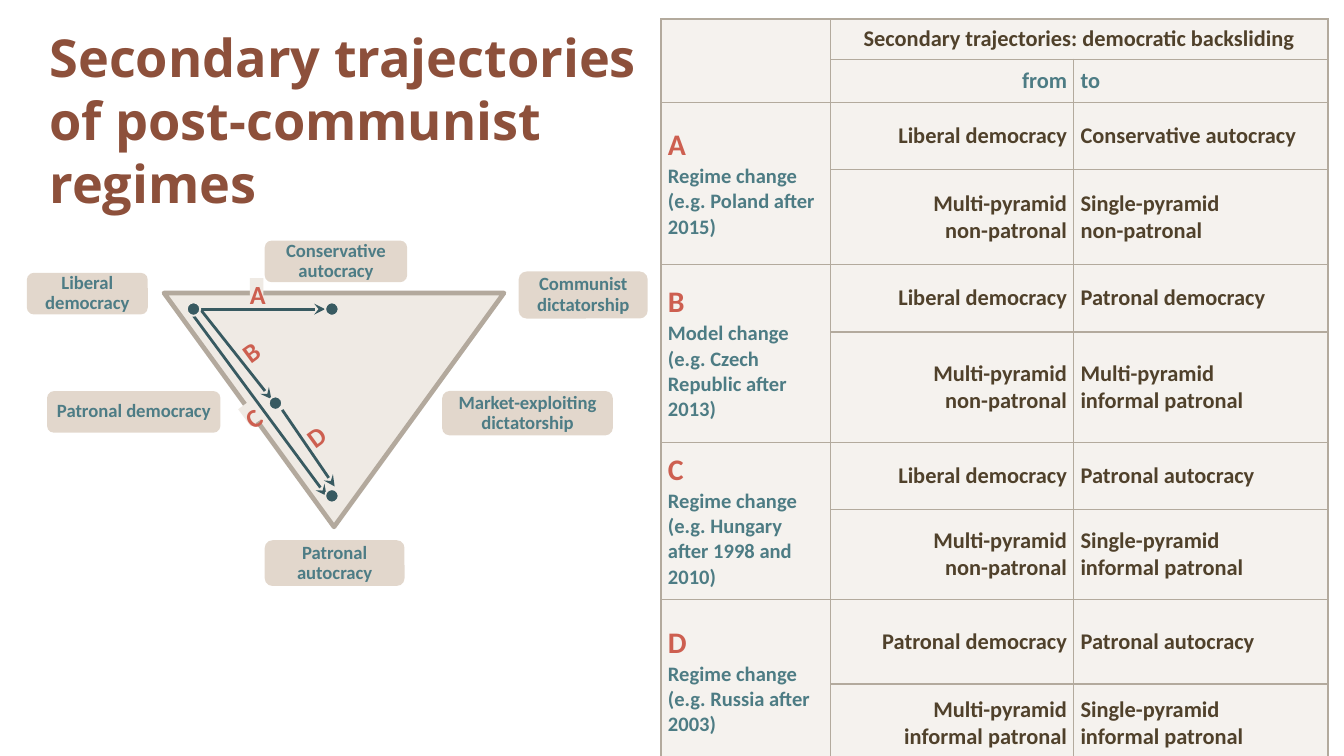
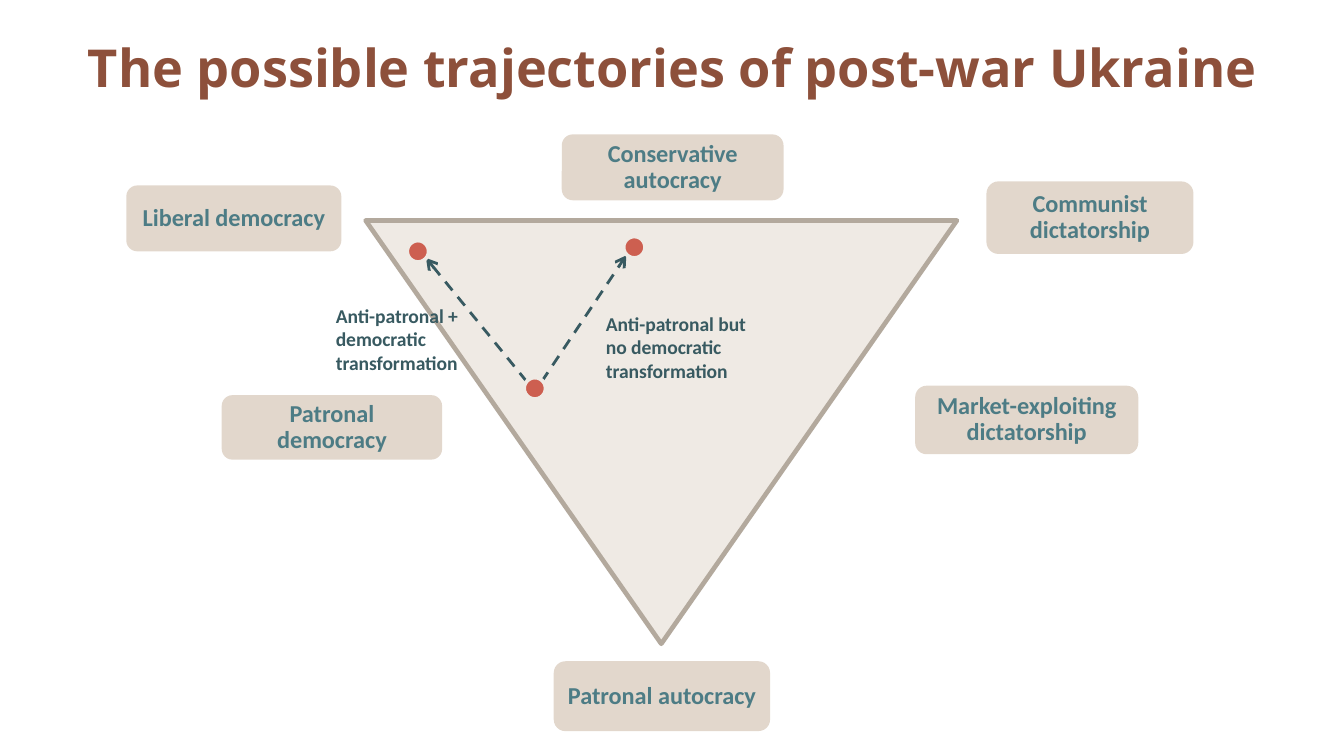
"""Build two slides on the trajectories of post-communist regimes."""
from dataclasses import dataclass

from lxml.etree import SubElement
from pptx import Presentation
from pptx.dml.color import RGBColor
from pptx.enum.dml import MSO_LINE
from pptx.enum.shapes import MSO_CONNECTOR, MSO_SHAPE
from pptx.enum.text import MSO_ANCHOR, PP_ALIGN
from pptx.oxml import parse_xml
from pptx.oxml.ns import nsdecls, qn
from pptx.util import Pt

PX = 9144
SLIDE_WIDTH = 1000


@dataclass(frozen=True)
class Theme:
    """Colours, fonts and type sizes of the deck."""

    title: str = "8D503B"
    label: str = "4D7C85"
    label_fill: str = "C7B09A"
    panel: str = "EFEAE4"
    edge: str = "B3A99D"
    arrow: str = "385A61"
    accent: str = "CD5F50"
    ink: str = "50412B"
    table_label: str = "4D7C84"
    table_edge: str = "B3AA9D"
    title_font: str = "Open Sans"
    body_font: str = "Calibri"
    title_size: float = 28
    letter_size: float = 14
    case_size: float = 16
    note_size: float = 11
    cell_size: float = 12
    comment_size: float = 10.5


THEME = Theme()

SECONDARY = {
    "title": "Secondary trajectories of post-communist regimes",
    "title_box": (27, 14, 457, 94),
    "triangle": (122, 218, 253, 174),
    "label_size": 10,
    "label_inset": 5,
    "labels": [
        ("Communist dictatorship", (386, 202, 96, 35)),
        ("Liberal democracy", (20, 203, 90, 31)),
        ("Patronal autocracy", (197, 402, 104, 34)),
        ("Conservative autocracy", (197, 179, 106, 31)),
        ("Market-exploiting dictatorship", (329, 291, 127, 33)),
        ("Patronal democracy", (35, 291, 129, 31)),
    ],
    "arrows": [
        ((144, 235), (243, 369)),
        ((149, 230), (202, 297)),
        ((210, 305), (249, 362)),
        ((149, 230), (242, 230)),
    ],
    "dots": [(139, 225), (242, 225), (242, 364), (200, 295)],
}
LETTERS = [
    ("A", (186, 207, 10, 17), 0, True),
    ("B", (179, 251, 10, 16), 323.7, False),
    ("C", (181, 300, 10, 16), 323.7, True),
    ("D", (227, 314, 10, 16), 323.7, False),
]

TABLE_BOX = (492, 14, 496, 549)
COLUMNS = (126, 181, 189)
ROWS = (27, 32, 50, 71, 50, 82, 50, 67, 63, 59)
TABLE_HEAD = "Secondary trajectories: democratic backsliding"
DIRECTIONS = ("from", "to")
CASES = [
    ("A", "Regime change", "(e.g. Poland after 2015)",
     [("Liberal democracy", "Conservative autocracy"),
      ("Multi-pyramid\nnon-patronal", "Single-pyramid\nnon-patronal")]),
    ("B", "Model change", "(e.g. Czech Republic after 2013)",
     [("Liberal democracy", "Patronal democracy"),
      ("Multi-pyramid\nnon-patronal", "Multi-pyramid\ninformal patronal")]),
    ("C", "Regime change", "(e.g. Hungary after 1998 and 2010)",
     [("Liberal democracy", "Patronal autocracy"),
      ("Multi-pyramid\nnon-patronal", "Single-pyramid\ninformal patronal")]),
    ("D", "Regime change", "(e.g. Russia after 2003)",
     [("Patronal democracy", "Patronal autocracy"),
      ("Multi-pyramid\ninformal patronal", "Single-pyramid\ninformal patronal")]),
]

UKRAINE = {
    "title": "The possible trajectories of post-war Ukraine",
    "title_box": (12, -1, 976, 101),
    "triangle": (272, 164, 440, 315),
    "label_size": 13,
    "label_inset": 8,
    "labels": [
        ("Communist dictatorship", (734, 135, 154, 54)),
        ("Liberal democracy", (94, 138, 160, 49)),
        ("Patronal autocracy", (412, 492, 161, 52)),
        ("Conservative autocracy", (418, 100, 165, 49)),
        ("Market-exploiting dictatorship", (681, 287, 166, 51)),
        ("Patronal democracy", (165, 294, 164, 48)),
    ],
    "arrows": [((392, 284), (317, 192)), ((403, 284), (466, 190))],
    "dots": [(390, 281), (303, 179), (464, 176)],
}
COMMENTS = [
    ("Anti-patronal but no democratic transformation", (441, 227, 129, 63)),
    ("Anti-patronal + democratic transformation", (240, 221, 122, 63)),
]


def emu(lengths):
    return [length * PX for length in lengths]


def paint(fill, colour, opacity=100):
    fill.solid()
    fill.fore_color.rgb = RGBColor.from_string(colour)
    if opacity < 100:
        element = fill._xPr.find(".//" + qn("a:srgbClr"))
        SubElement(element, qn("a:alpha"), val=str(opacity * 1000))


def stroke(line, colour, width):
    line.color.rgb = RGBColor.from_string(colour)
    line.width = Pt(width)


def style(para, size, colour, align=PP_ALIGN.LEFT, font=THEME.body_font):
    para.alignment = align
    for span in para.runs:
        span.font.name = font
        span.font.size = Pt(size)
        span.font.bold = True
        span.font.color.rgb = RGBColor.from_string(colour)


def write(box, text, inset=(10, 5), anchor=MSO_ANCHOR.TOP):
    frame = box.text_frame
    frame.text = text
    frame.word_wrap = True
    frame.vertical_anchor = anchor
    frame.margin_left = frame.margin_right = inset[0] * PX
    frame.margin_top = frame.margin_bottom = inset[1] * PX
    return frame.paragraphs[0]


def add_panel(page, kind, box, fill=None, opacity=100, line=None):
    shape = page.shapes.add_shape(kind, *emu(box))
    shape.shadow.inherit = False
    if fill:
        paint(shape.fill, fill, opacity)
    else:
        shape.fill.background()
    if line:
        stroke(shape.line, *line)
    else:
        shape.line.fill.background()
    return shape


def add_title(page, content, align, anchor):
    box = page.shapes.add_textbox(*emu(content["title_box"]))
    para = write(box, content["title"], anchor=anchor)
    style(para, THEME.title_size, THEME.title, align, THEME.title_font)


def add_triangle(page, content):
    triangle = add_panel(page, MSO_SHAPE.ISOSCELES_TRIANGLE, content["triangle"],
                         THEME.panel, line=(THEME.edge, 2.5))
    triangle.rotation = 180
    for text, box in content["labels"]:
        label = add_panel(page, MSO_SHAPE.ROUNDED_RECTANGLE, box, THEME.label_fill, 50)
        inset = content["label_inset"]
        para = write(label, text, (inset, 5), MSO_ANCHOR.MIDDLE)
        para.line_spacing = 0.9
        style(para, content["label_size"], THEME.label, PP_ALIGN.CENTER)


def add_arrows(page, content, head, dash=None):
    for start, end in content["arrows"]:
        arrow = page.shapes.add_connector(MSO_CONNECTOR.STRAIGHT, *emu(start + end))
        stroke(arrow.line, THEME.arrow, 1.5)
        if dash:
            arrow.line.dash_style = dash
        SubElement(arrow.line._get_or_add_ln(), qn("a:tailEnd"), type=head)
        SubElement(arrow._element.spPr, qn("a:effectLst"))


def add_dots(page, content, size, colour, outline):
    for left, top in content["dots"]:
        add_panel(page, MSO_SHAPE.OVAL, (left, top, size, size), colour,
                  line=(THEME.panel, outline))


def add_letters(page):
    for text, box, angle, filled in LETTERS:
        fill = THEME.panel if filled else None
        letter = add_panel(page, MSO_SHAPE.RECTANGLE, box, fill)
        letter.rotation = angle
        style(write(letter, text, (0, 0)), THEME.letter_size, THEME.accent, PP_ALIGN.CENTER)


def set_borders(cell, outer):
    properties = cell._tc.get_or_add_tcPr()
    for index, side in enumerate("LRTB"):
        width = Pt(1 if side in outer else 0.75)
        properties.insert(index, parse_xml(
            f'<a:ln{side} {nsdecls("a")} w="{width}"><a:solidFill>'
            f'<a:srgbClr val="{THEME.table_edge}"/></a:solidFill></a:ln{side}>'))


def prepare_cell(cell, row, column):
    paint(cell.fill, THEME.panel, 60)
    edges = {
        "L": column == 0,
        "R": column + cell.span_width == len(COLUMNS),
        "T": row == 0,
        "B": row + cell.span_height == len(ROWS),
    }
    set_borders(cell, [side for side, outer in edges.items() if outer])
    cell.vertical_anchor = MSO_ANCHOR.MIDDLE
    cell.margin_left = cell.margin_right = 5 * PX
    cell.margin_top = cell.margin_bottom = 5 * PX
    ending = SubElement(cell.text_frame.paragraphs[0]._p, qn("a:endParaRPr"))
    ending.set("sz", str(THEME.cell_size * 100))


def fill_cell(cell, text, colour, align=PP_ALIGN.LEFT):
    cell.text_frame.text = text
    for para in cell.text_frame.paragraphs:
        style(para, THEME.cell_size, colour, align)


def fill_pair(table, row, pair, colour):
    for column, (text, align) in enumerate(zip(pair, (PP_ALIGN.RIGHT, PP_ALIGN.LEFT)), 1):
        fill_cell(table.cell(row, column), text, colour, align)


def add_cases(page):
    table = page.shapes.add_table(len(ROWS), len(COLUMNS), *emu(TABLE_BOX)).table
    table.first_row = table.horz_banding = False
    for column, width in zip(table.columns, COLUMNS):
        column.width = width * PX
    for row, height in zip(table.rows, ROWS):
        row.height = height * PX
    for top in range(0, len(ROWS), 2):
        table.cell(top, 0).merge(table.cell(top + 1, 0))
    table.cell(0, 1).merge(table.cell(0, 2))
    for row in range(len(ROWS)):
        for column in range(len(COLUMNS)):
            prepare_cell(table.cell(row, column), row, column)
    fill_cell(table.cell(0, 1), TABLE_HEAD, THEME.ink, PP_ALIGN.CENTER)
    fill_pair(table, 1, DIRECTIONS, THEME.table_label)
    for index, (letter, change, example, pairs) in enumerate(CASES):
        top = 2 + 2 * index
        frame = table.cell(top, 0).text_frame
        frame.text = "\n".join((letter, change, example))
        style(frame.paragraphs[0], THEME.case_size, THEME.accent)
        for para in frame.paragraphs[1:]:
            style(para, THEME.note_size, THEME.table_label)
        for offset, pair in enumerate(pairs):
            fill_pair(table, top + offset, pair, THEME.ink)


def build_secondary(page):
    add_triangle(page, SECONDARY)
    add_title(page, SECONDARY, PP_ALIGN.LEFT, MSO_ANCHOR.TOP)
    add_cases(page)
    add_arrows(page, SECONDARY, "stealth")
    add_letters(page)
    add_dots(page, SECONDARY, 10, THEME.arrow, 1)


def build_ukraine(page):
    add_triangle(page, UKRAINE)
    add_title(page, UKRAINE, PP_ALIGN.CENTER, MSO_ANCHOR.MIDDLE)
    add_arrows(page, UKRAINE, "arrow", MSO_LINE.DASH)
    add_dots(page, UKRAINE, 16, THEME.accent, 2)
    for text, box in COMMENTS:
        comment = page.shapes.add_textbox(*emu(box))
        style(write(comment, text), THEME.comment_size, THEME.arrow)


def main():
    deck = Presentation()
    deck.slide_width = SLIDE_WIDTH * PX
    deck.slide_height = deck.slide_width * 9 // 16
    for build in (build_secondary, build_ukraine):
        build(deck.slides.add_slide(deck.slide_layouts[6]))
    deck.save("out.pptx")


if __name__ == "__main__":
    main()
